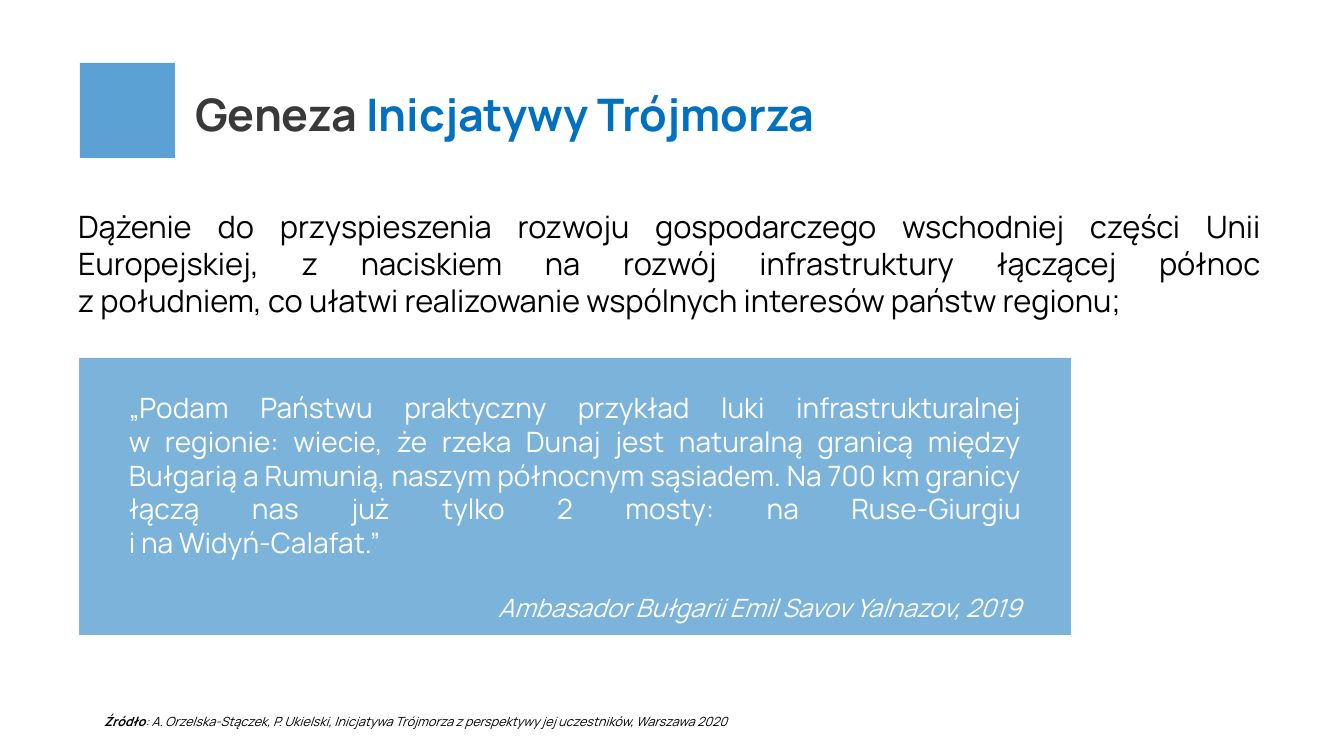
import pptx
import pptx.dml.color
import pptx.enum.shapes
import pptx.enum.text
import pptx.oxml.ns
import pptx.util
from lxml import etree

PX = 12192000 / 1344
FONT = "Manrope"
BLUE = "5BA1D3"
ACCENT = "0070C0"
GREY = "393939"
BLACK = "000000"
WHITE = "FFFFFF"
ALIGN = pptx.enum.text.PP_ALIGN


def px(length):
    return pptx.util.Emu(round(length * PX))


def color(value):
    return pptx.dml.color.RGBColor.from_string(value)


def place(shape, left, top, width, height):
    shape.left, shape.top = px(left), px(top)
    shape.width, shape.height = px(width), px(height)


def add_rectangle(page, left, top, width, height, opacity=100):
    kind = pptx.enum.shapes.MSO_SHAPE.RECTANGLE
    box = page.shapes.add_shape(kind, px(left), px(top), px(width), px(height))
    box.shadow.inherit = False
    box.fill.solid()
    box.fill.fore_color.rgb = color(BLUE)
    box.line.fill.background()
    if opacity < 100:
        fill = box.fill._xPr.find(".//" + pptx.oxml.ns.qn("a:srgbClr"))
        alpha = etree.SubElement(fill, pptx.oxml.ns.qn("a:alpha"))
        alpha.set("val", str(opacity * 1000))


def prepare_frame(shape):
    frame = shape.text_frame
    frame.word_wrap = True
    frame.auto_size = pptx.enum.text.MSO_AUTO_SIZE.NONE
    frame.vertical_anchor = pptx.enum.text.MSO_ANCHOR.TOP
    return frame


def add_text_box(page, left, top, width, height):
    box = page.shapes.add_textbox(px(left), px(top), px(width), px(height))
    return prepare_frame(box)


def format_paragraph(para, align, gap=0):
    para.alignment = align
    para.space_before = pptx.util.Pt(gap)


def remove_bullet(para):
    properties = para._p.get_or_add_pPr()
    properties.set("marL", "0")
    properties.set("indent", "0")
    etree.SubElement(properties, pptx.oxml.ns.qn("a:buNone"))


def add_span(para, text, size, fill, bold=False, italic=False):
    span = para.add_run()
    span.text = text
    span.font.name = FONT
    span.font.size = pptx.util.Pt(size)
    span.font.color.rgb = color(fill)
    span.font.bold = bold
    span.font.italic = italic


def add_lines(para, lines, size, fill):
    for number, line in enumerate(lines):
        if number:
            para.add_line_break()
        add_span(para, line, size, fill)


def fill_title(page):
    title = page.shapes.title
    place(title, 185, 82, 1166, 65)
    para = prepare_frame(title).paragraphs[0]
    format_paragraph(para, ALIGN.LEFT)
    add_span(para, "Geneza ", 32, GREY, bold=True)
    add_span(para, "Inicjatywy Trójmorza", 32, ACCENT, bold=True)


def fill_body(page):
    body = page.placeholders[1]
    place(body, 68, 203, 1203, 122)
    para = prepare_frame(body).paragraphs[0]
    remove_bullet(para)
    format_paragraph(para, ALIGN.JUSTIFY)
    add_lines(para, [
        "Dążenie do przyspieszenia rozwoju gospodarczego wschodniej części Unii "
        "Europejskiej, z naciskiem na rozwój infrastruktury łączącej północ",
        "z południem, co ułatwi realizowanie wspólnych interesów państw regionu;",
    ], 22, BLACK)


def add_quote(page):
    frame = add_text_box(page, 119, 386, 912, 242)
    quote = frame.paragraphs[0]
    format_paragraph(quote, ALIGN.JUSTIFY)
    add_lines(quote, [
        "„Podam Państwu praktyczny przykład luki infrastrukturalnej",
        "w regionie: wiecie, że rzeka Dunaj jest naturalną granicą między "
        "Bułgarią a Rumunią, naszym północnym sąsiadem. Na 700 km granicy "
        "łączą nas już tylko 2 mosty: na Ruse-Giurgiu",
        "i na Widyń-Calafat.”",
    ], 20, WHITE)
    author = frame.add_paragraph()
    format_paragraph(author, ALIGN.RIGHT, gap=24)
    add_span(author, "Ambasador Bułgarii Emil Savov Yalnazov, 2019", 18, WHITE, italic=True)


def add_reference(page):
    para = add_text_box(page, 94, 709, 769, 25).paragraphs[0]
    format_paragraph(para, ALIGN.LEFT)
    add_span(para, "Źródło", 9, BLACK, bold=True, italic=True)
    add_span(para, ": A. Orzelska-Stączek, P. Ukielski, Inicjatywa Trójmorza "
             "z perspektywy jej uczestników, Warszawa 2020", 9, BLACK, italic=True)


def main():
    deck = pptx.Presentation()
    deck.slide_width, deck.slide_height = px(1344), px(756)
    page = deck.slides.add_slide(deck.slide_layouts[1])
    add_rectangle(page, 79, 358, 992, 277, opacity=80)
    add_rectangle(page, 80, 63, 95, 95)
    fill_title(page)
    fill_body(page)
    add_quote(page)
    add_reference(page)
    deck.save("out.pptx")


if __name__ == "__main__":
    main()
